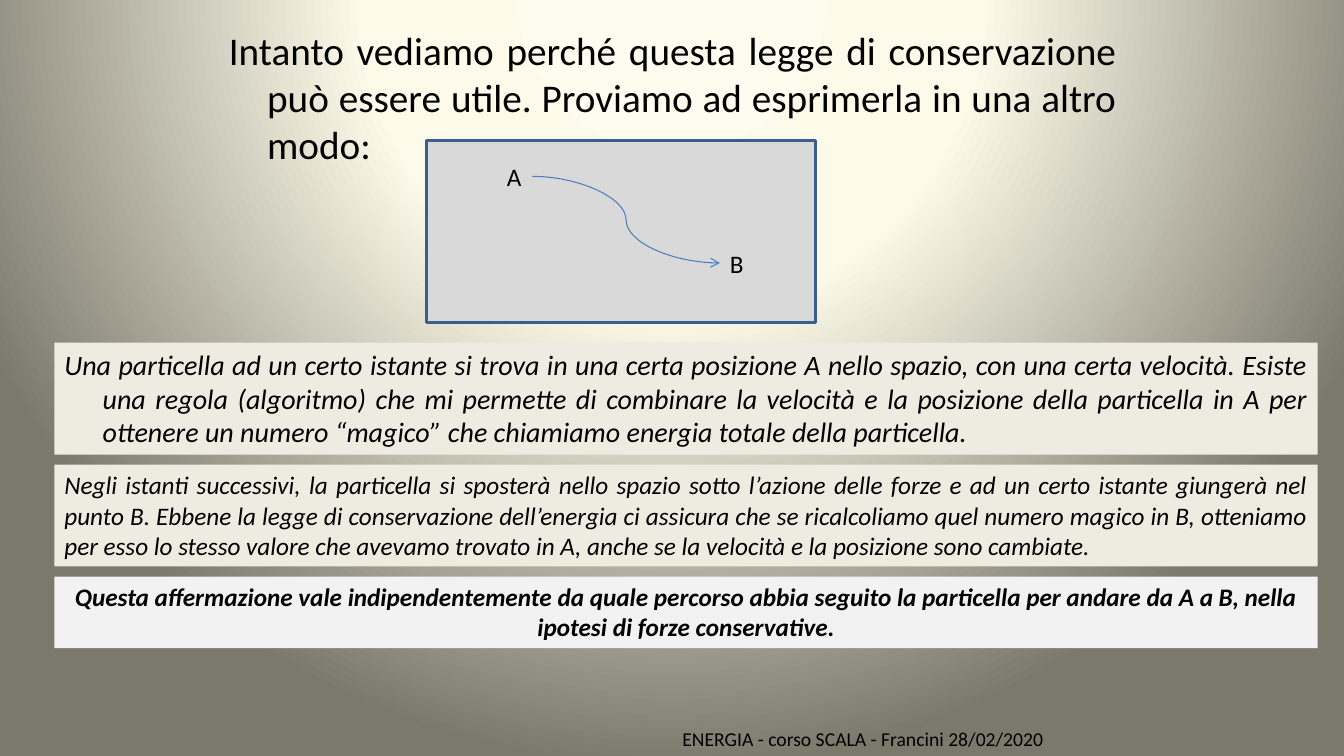
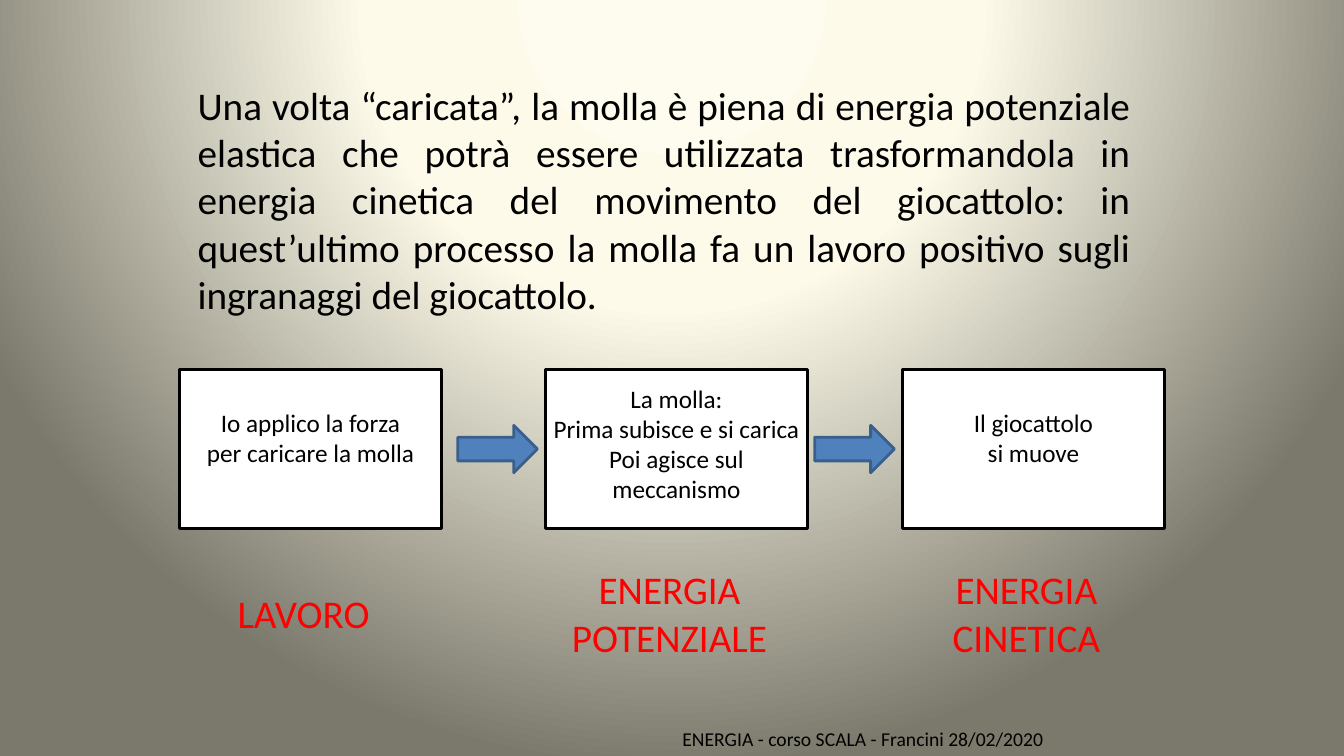
from lxml import etree
from pptx import Presentation as Deck
from pptx.dml.color import RGBColor
from pptx.enum.shapes import MSO_CONNECTOR as Link, MSO_SHAPE as Form
from pptx.enum.text import MSO_ANCHOR as Hold, MSO_AUTO_SIZE as Fit, PP_ALIGN as Align
from pptx.oxml.ns import qn
from pptx.util import Inches, Pt

FONT = "Calibri"
BLACK, WHITE, RED = "000000", "FFFFFF", "FF0000"
GREY, CREAM, PALE = "D9D9D9", "EEECE1", "F2F2F2"
BLUE, NAVY, CURVE = "4F81BD", "3A5F8C", "4B7EBC"
STOPS = [(0, "FEFCEE"), (40, "FDFAEA"), (100, "7B796B")]
NOTE = "ENERGIA - corso SCALA - Francini 28/02/2020"


def tint(code):
    return RGBColor.from_string(code)


def child(node, tag, **attrs):
    return etree.SubElement(node, qn(tag), {k: str(v) for k, v in attrs.items()})


def write(frame, text, size=18, color=BLACK, bold=False, slant=False,
          align=Align.LEFT, hang=0, wrap=True, hold=Hold.TOP):
    frame.auto_size = Fit.NONE
    frame.word_wrap = wrap
    frame.vertical_anchor = hold
    frame.text = text
    for para in frame.paragraphs:
        para.alignment = align
        para.space_before = Pt(0)
        props = para._p.get_or_add_pPr()
        props.set("marL", str(Inches(hang)))
        props.set("indent", str(-Inches(hang)))
        for run in para.runs:
            font = run.font
            font.name, font.size = FONT, Pt(size)
            font.bold, font.italic = bold, slant
            font.color.rgb = tint(color)


class Board:
    """Holds the deck style and the slide being drawn."""

    def __init__(self):
        self.deck = Deck()
        self.deck.slide_width, self.deck.slide_height = Inches(13.33), Inches(7.5)
        self.paint()

    def paint(self):
        fill = self.deck.slide_master.background.fill
        fill.gradient()
        grad = next(self.deck.slide_master.element.iter(qn("a:gradFill")))
        for part in list(grad):
            grad.remove(part)
        stops = child(grad, "a:gsLst")
        for place, code in STOPS:
            stop = child(stops, "a:gs", pos=place * 1000)
            child(stop, "a:srgbClr", val=code)
        ring = child(grad, "a:path", path="circle")
        child(ring, "a:fillToRect", l=50000, t=-80000, r=50000, b=180000)

    def start(self):
        self.slide = self.deck.slides.add_slide(self.deck.slide_layouts[1])
        title = self.slide.shapes.title._element
        title.getparent().remove(title)
        self.label(NOTE, 6.67, 7.16, 5, 0.34, size=14)

    def body(self, text, x, y, w, h, **style):
        hold = self.slide.placeholders[1]
        hold.left, hold.top, hold.width, hold.height = map(Inches, (x, y, w, h))
        write(hold.text_frame, text, size=28, align=Align.JUSTIFY, **style)
        for para in hold.text_frame.paragraphs:
            child(para._p.get_or_add_pPr(), "a:buNone")

    def label(self, text, x, y, w, h, **style):
        box = self.slide.shapes.add_textbox(*map(Inches, (x, y, w, h)))
        write(box.text_frame, text, **style)

    def shape(self, x, y, w, h, fill, line=None, form=Form.RECTANGLE):
        item = self.slide.shapes.add_shape(form, *map(Inches, (x, y, w, h)))
        item.shadow.inherit = False
        item.fill.solid()
        item.fill.fore_color.rgb = tint(fill)
        if line:
            item.line.color.rgb = tint(line)
            item.line.width = Pt(2)
        else:
            item.line.fill.background()
        return item

    def panel(self, text, y, h, fill, **style):
        item = self.shape(0.54, y, 12.53, h, fill)
        write(item.text_frame, text, slant=True, **style)

    def card(self, text, x, y, w, h, inset):
        frame = self.shape(x, y, w, h, WHITE, BLACK).text_frame
        frame.margin_left = frame.margin_right = 0
        frame.margin_top = Inches(inset)
        write(frame, text, align=Align.CENTER)

    def curve(self, x1, y1, x2, y2):
        link = self.slide.shapes.add_connector(
            Link.CURVE, *map(Inches, (x1, y1, x2, y2)))
        link.line.color.rgb = tint(CURVE)
        link.line.width = Pt(0.75)
        child(link.line._get_or_add_ln(), "a:tailEnd", type="arrow")
        child(link._element.spPr, "a:effectLst")


def law(board):
    board.start()
    board.body("Intanto vediamo perché questa legge di conservazione può essere utile. "
               "Proviamo ad esprimerla in una altro modo:",
               2.17, 0.21, 9, 1.5, hang=0.38)
    board.shape(4.23, 1.39, 3.86, 1.81, GREY, NAVY)
    board.label("A", 4.93, 1.55, 0.35, 0.4, wrap=False)
    board.label("B", 7.14, 2.41, 0.34, 0.4, wrap=False)
    board.curve(5.28, 1.75, 7.14, 2.61)
    panels = [
        ("Una particella ad un certo istante si trova in una certa posizione A nello "
         "spazio, con una certa velocità. Esiste una regola (algoritmo) che mi permette "
         "di combinare la velocità e la posizione della particella in A per ottenere un "
         "numero “magico” che chiamiamo energia totale della particella.",
         1.11, CREAM, dict(size=20, align=Align.JUSTIFY, hang=0.38)),
        ("Negli istanti successivi, la particella si sposterà nello spazio sotto "
         "l’azione delle forze e ad un certo istante giungerà nel punto B. Ebbene la "
         "legge di conservazione dell’energia ci assicura che se ricalcoliamo quel "
         "numero magico in B, otteniamo per esso lo stesso valore che avevamo trovato "
         "in A, anche se la velocità e la posizione sono cambiate.",
         1.01, CREAM, dict(align=Align.JUSTIFY)),
        ("Questa affermazione vale indipendentemente da quale percorso abbia seguito la "
         "particella per andare da A a B, nella ipotesi di forze conservative.",
         0.71, PALE, dict(align=Align.CENTER, bold=True)),
    ]
    top = 3.4
    for text, high, fill, style in panels:
        board.panel(text, top, high, fill, **style)
        top += high + 0.1


def spring(board):
    board.start()
    board.body("Una volta “caricata”, la molla è piena di energia potenziale elastica che "
               "potrà essere utilizzata trasformandola in energia cinetica del movimento "
               "del giocattolo: in quest’ultimo processo la molla fa un lavoro positivo "
               "sugli ingranaggi del giocattolo.",
               1.86, 0.76, 9.45, 2.46)
    steps = [
        (1.78, 0.37, "Io applico la forza\nper caricare la molla", "LAVORO"),
        (5.41, 0.13, "La molla:\nPrima subisce e si carica\nPoi agisce sul\nmeccanismo",
         "ENERGIA\nPOTENZIALE"),
        (8.95, 0.37, "Il giocattolo\nsi muove", "ENERGIA\nCINETICA"),
    ]
    for num, (x, inset, text, name) in enumerate(steps):
        board.card(text, x, 3.67, 2.6, 1.57, inset)
        board.label(name, x - 0.07, 5.56, 2.6, 1.04, size=28, color=RED,
                    align=Align.CENTER, hold=Hold.MIDDLE)
        if num:
            board.shape(x - 0.87, 4.22, 0.79, 0.47, BLUE, NAVY, Form.RIGHT_ARROW)


def main():
    board = Board()
    law(board)
    spring(board)
    board.deck.save("out.pptx")


if __name__ == "__main__":
    main()
